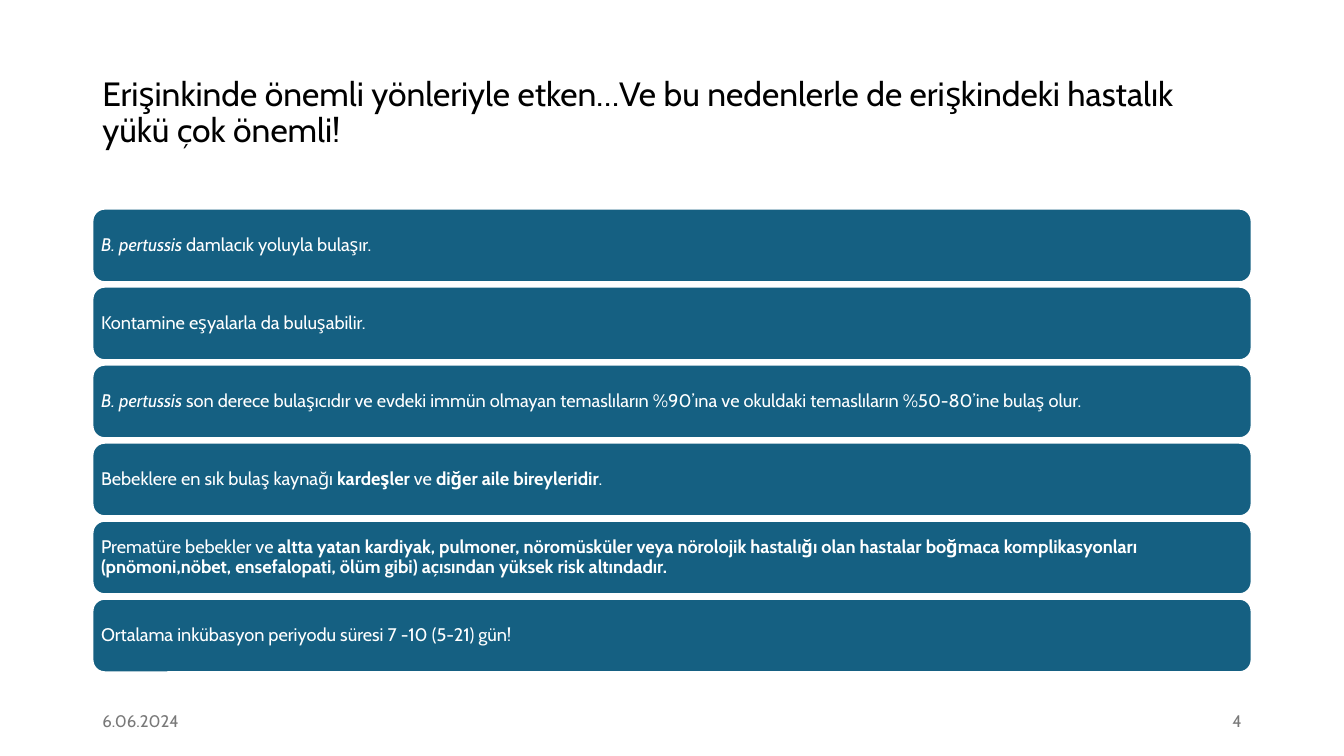
from dataclasses import dataclass

from pptx import Presentation
from pptx.dml.color import RGBColor
from pptx.enum.shapes import MSO_SHAPE
from pptx.enum.text import MSO_ANCHOR, PP_ALIGN
from pptx.util import Inches, Pt

COLUMNS, ROWS = 160, 150
MARGIN, CONTENT_WIDTH = 11, 138
FOOTER_TOP, FOOTER_WIDTH, FOOTER_HEIGHT = 139, 36, 8
FIRST_BAR, BAR_HEIGHT, BAR_PITCH = 41.4, 14.6, 15.48

TITLE = ("Erişinkinde önemli yönleriyle etken…Ve bu nedenlerle de "
         "erişkindeki hastalık yükü çok önemli!")
# Each fact is a list of (wording, emphasis) pairs.
FACTS = [
    [("B. pertussis ", "italic"), ("damlacık yoluyla bulaşır.", None)],
    [("Kontamine eşyalarla da buluşabilir.", None)],
    [("B. pertussis ", "italic"),
     ("son derece bulaşıcıdır ve evdeki immün olmayan temaslıların %90’ına "
      "ve okuldaki temaslıların %50-80’ine bulaş olur.", None)],
    [("Bebeklere en sık bulaş kaynağı ", None), ("kardeşler", "bold"),
     (" ve ", None), ("diğer aile bireyleridir", "bold"), (".", None)],
    [("Prematüre bebekler ve ", None),
     ("altta yatan kardiyak, pulmoner, nöromüsküler veya nörolojik hastalığı "
      "olan hastalar boğmaca komplikasyonları (pnömoni,nöbet, ensefalopati, "
      "ölüm gibi) açısından yüksek risk altındadır.", "bold")],
    [("Ortalama inkübasyon periyodu süresi 7 -10 (5-21) gün!", None)],
]


@dataclass(frozen=True)
class Theme:
    font: str = "Cabin"
    ink: RGBColor = RGBColor(0, 0, 0)
    muted: RGBColor = RGBColor(0x79, 0x79, 0x79)
    accent: RGBColor = RGBColor(0x15, 0x60, 0x82)
    paper: RGBColor = RGBColor(0xFF, 0xFF, 0xFF)
    title_size: Pt = Pt(24)
    body_size: Pt = Pt(13)
    footer_size: Pt = Pt(12)
    outline: Pt = Pt(1.5)


def apply(target, formats):
    for attribute, value in formats.items():
        setattr(target, attribute, value)


class FactSlide:
    def __init__(self, deck, theme):
        self.theme = theme
        self.column = deck.slide_width / COLUMNS
        self.row = deck.slide_height / ROWS
        self.slide = deck.slides.add_slide(deck.slide_layouts[6])

    def place(self, left, top, width, height):
        """Turn grid columns and rows into slide lengths."""
        return (round(left * self.column), round(top * self.row),
                round(width * self.column), round(height * self.row))

    def fill_text(self, frame, runs, size, color, align=PP_ALIGN.LEFT, spacing=1.0):
        apply(frame, {"word_wrap": True, "vertical_anchor": MSO_ANCHOR.MIDDLE})
        paragraph = frame.paragraphs[0]
        apply(paragraph, {"alignment": align, "line_spacing": spacing})
        for wording, emphasis in runs:
            run = paragraph.add_run()
            run.text = wording
            formats = {"name": self.theme.font, "size": size}
            if emphasis:
                formats[emphasis] = True
            apply(run.font, formats)
            run.font.color.rgb = color

    def label(self, wording, area, size, color, **layout):
        box = self.slide.shapes.add_textbox(*self.place(*area))
        self.fill_text(box.text_frame, [(wording, None)], size, color, **layout)

    def bar(self, runs, area):
        theme = self.theme
        bar = self.slide.shapes.add_shape(
            MSO_SHAPE.ROUNDED_RECTANGLE, *self.place(*area))
        bar.shadow.inherit = False
        bar.fill.solid()
        bar.fill.fore_color.rgb = theme.accent
        bar.line.color.rgb = theme.paper
        bar.line.width = theme.outline
        sides = ("left", "top", "right", "bottom")
        apply(bar.text_frame, {f"margin_{side}": Inches(0.05) for side in sides})
        self.fill_text(bar.text_frame, runs, theme.body_size, theme.paper, spacing=0.9)


def main():
    deck = Presentation()
    apply(deck, {"slide_width": Inches(13.33), "slide_height": Inches(7.5)})
    theme = Theme()
    page = FactSlide(deck, theme)

    page.label(TITLE, (MARGIN, 8, CONTENT_WIDTH, 29),
               theme.title_size, theme.ink, spacing=0.9)
    for index, fact in enumerate(FACTS):
        top = FIRST_BAR + index * BAR_PITCH
        page.bar(fact, (MARGIN, top, CONTENT_WIDTH, BAR_HEIGHT))

    number_left = MARGIN + CONTENT_WIDTH - FOOTER_WIDTH
    for wording, left, align in (("6.06.2024", MARGIN, PP_ALIGN.LEFT),
                                 ("4", number_left, PP_ALIGN.RIGHT)):
        page.label(wording, (left, FOOTER_TOP, FOOTER_WIDTH, FOOTER_HEIGHT),
                   theme.footer_size, theme.muted, align=align)
    deck.save("out.pptx")


if __name__ == "__main__":
    main()
